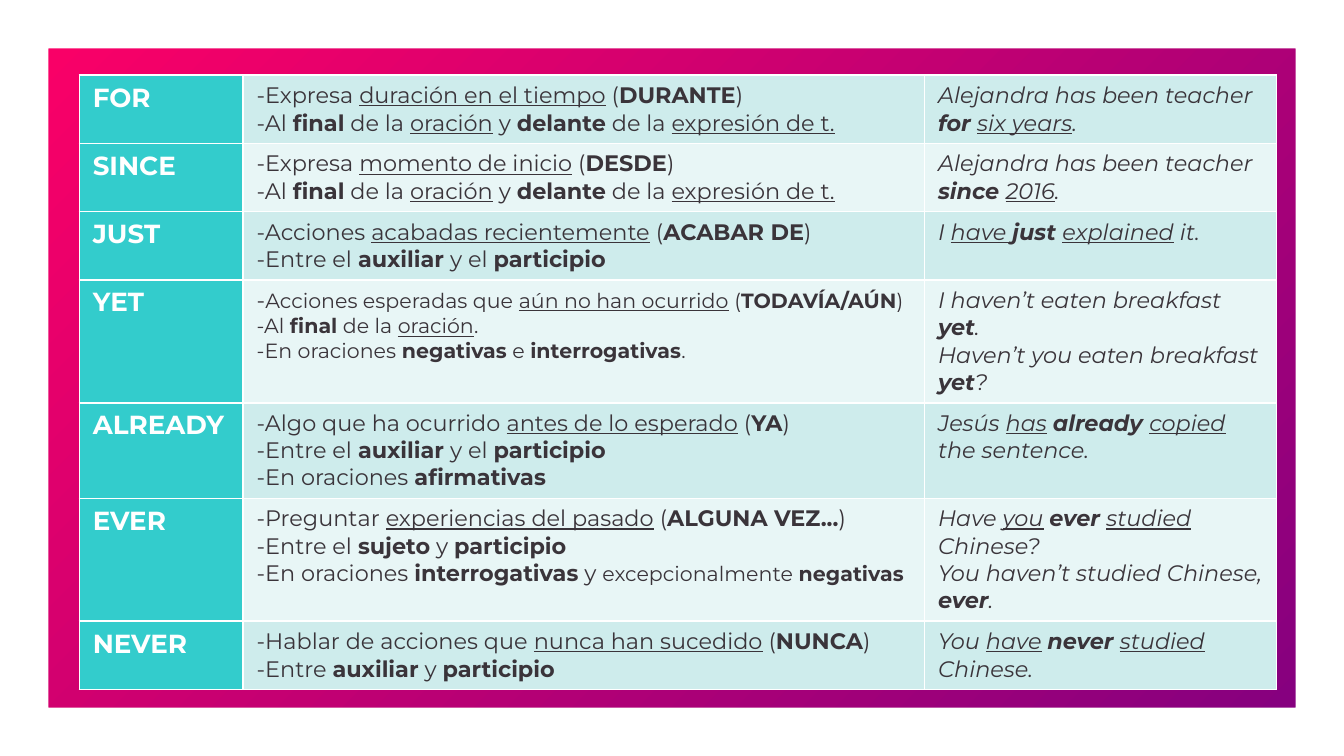
"""Build a slide with a table of English present perfect time markers."""
from lxml.etree import SubElement as Sub
from pptx import Presentation
from pptx.dml.color import RGBColor as RGB
from pptx.enum.shapes import MSO_SHAPE as Kind
from pptx.oxml.ns import qn
from pptx.util import Inches, Pt

WHITE = RGB(255, 255, 255)
PINK = RGB(255, 0, 102)
PURPLE = RGB(128, 0, 128)
TEAL = RGB(0x33, 0xCC, 0xCC)
DARK = RGB(0x3A, 0x34, 0x3A)
BANDS = [RGB(0xCE, 0xEC, 0xEC), RGB(0xE8, 0xF6, 0xF6)]
FONT = "Montserrat"
BOLD, LINE, SMALL = "*_~"

PLACE = "-Al *final* de la _oración_ y *delante* de la _expresión de t._"
MIDDLE = "-Entre el *auxiliar* y el *participio*"

ROWS = [
    ("FOR", ["-Expresa _duración en el tiempo_ (*DURANTE*)", PLACE],
     ["Alejandra has been teacher *for *_six years_."]),
    ("SINCE", ["-Expresa _momento de inicio_ (*DESDE*)", PLACE],
     ["Alejandra has been teacher *since *_2016_."]),
    ("JUST", ["-Acciones _acabadas recientemente_ (*ACABAR DE*)", MIDDLE],
     ["I _have _*just *_explained_ it."]),
    ("YET", ["-~Acciones esperadas que _aún no han ocurrido_ (*TODAVÍA/AÚN*)~",
             "~-Al *final* de la _oración_.~",
             "~-En oraciones *negativas* e *interrogativas*.~"],
     ["I haven’t eaten breakfast *yet*.",
      "Haven’t you eaten breakfast *yet*?"]),
    ("ALREADY", ["-Algo que ha ocurrido _antes de lo esperado_ (*YA*)", MIDDLE,
                 "-En oraciones *afirmativas*"],
     ["Jesús _has_ *already *_copied_ the sentence."]),
    ("EVER", ["-Preguntar _experiencias del pasado_ (*ALGUNA VEZ...*)",
              "-Entre el *sujeto* y *participio*",
              "-En oraciones *interrogativas* y ~excepcionalmente *negativas*~"],
     ["Have _you_ *ever *_studied_ Chinese?",
      "You haven’t studied Chinese, *ever*."]),
    ("NEVER", ["-Hablar de acciones que _nunca han sucedido_ (*NUNCA*)",
               "-Entre *auxiliar* y *participio*"],
     ["You _have_ *never *_studied_ Chinese."]),
]


def write(para, text, size, color, slant=False):
    """Add runs, switching bold, underline and small size at each mark."""
    marks, part = set(), ""
    for char in text + BOLD:
        if char not in (BOLD, LINE, SMALL):
            part += char
            continue
        if part:
            run = para.add_run()
            run.text, part = part, ""
            font = run.font
            font.name = FONT
            font.size = Pt(size - 1 if SMALL in marks else size)
            font.color.rgb = color
            font.bold = BOLD in marks
            font.underline = LINE in marks
            font.italic = slant
        marks ^= {char}


def border(cell):
    """Draw a thin white line on all four sides of a cell."""
    props = cell._tc.get_or_add_tcPr()
    for side in "LRTB":
        line = Sub(props, qn("a:ln" + side), w=str(Pt(1)))
        fill = Sub(line, qn("a:solidFill"))
        Sub(fill, qn("a:srgbClr"), val=str(WHITE))


deck = Presentation()
deck.slide_width = Inches(10)
deck.slide_height = deck.slide_width * 9 // 16
slide = deck.slides.add_slide(deck.slide_layouts[6])

back = slide.background.fill
back.gradient()
back.gradient_angle = 315
for stop, color in zip(back.gradient_stops, (PINK, PURPLE)):
    stop.color.rgb = color

frame = slide.shapes.add_shape(Kind.FRAME, 0, 0, deck.slide_width, deck.slide_height)
frame.adjustments[0] = 0.064
frame.shadow.inherit = False
frame.fill.solid()
frame.fill.fore_color.rgb = WHITE
frame.line.fill.background()

holder = slide.shapes.add_table(
    len(ROWS), 3, Inches(0.59), Inches(0.56), Inches(8.91), Inches(4.5))
table = holder.table
table.first_row = False
table.horz_banding = False
for col, width in zip(table.columns, (1.22, 5.07, 2.62)):
    col.width = Inches(width)
for row in table.rows:
    row.height = Inches(0.39)
holder.height = Inches(4.5)

for r, (word, rules, cases) in enumerate(ROWS):
    band = BANDS[r % 2]
    looks = [([BOLD + word + BOLD], TEAL, 14, WHITE),
             (rules, band, 12, DARK), (cases, band, 12, DARK)]
    for c, (lines, fill, size, color) in enumerate(looks):
        cell = table.cell(r, c)
        border(cell)
        cell.fill.solid()
        cell.fill.fore_color.rgb = fill
        body = cell.text_frame
        for i, text in enumerate(lines):
            para = body.add_paragraph() if i else body.paragraphs[0]
            write(para, text, size, color, c == 2)

deck.save("out.pptx")
